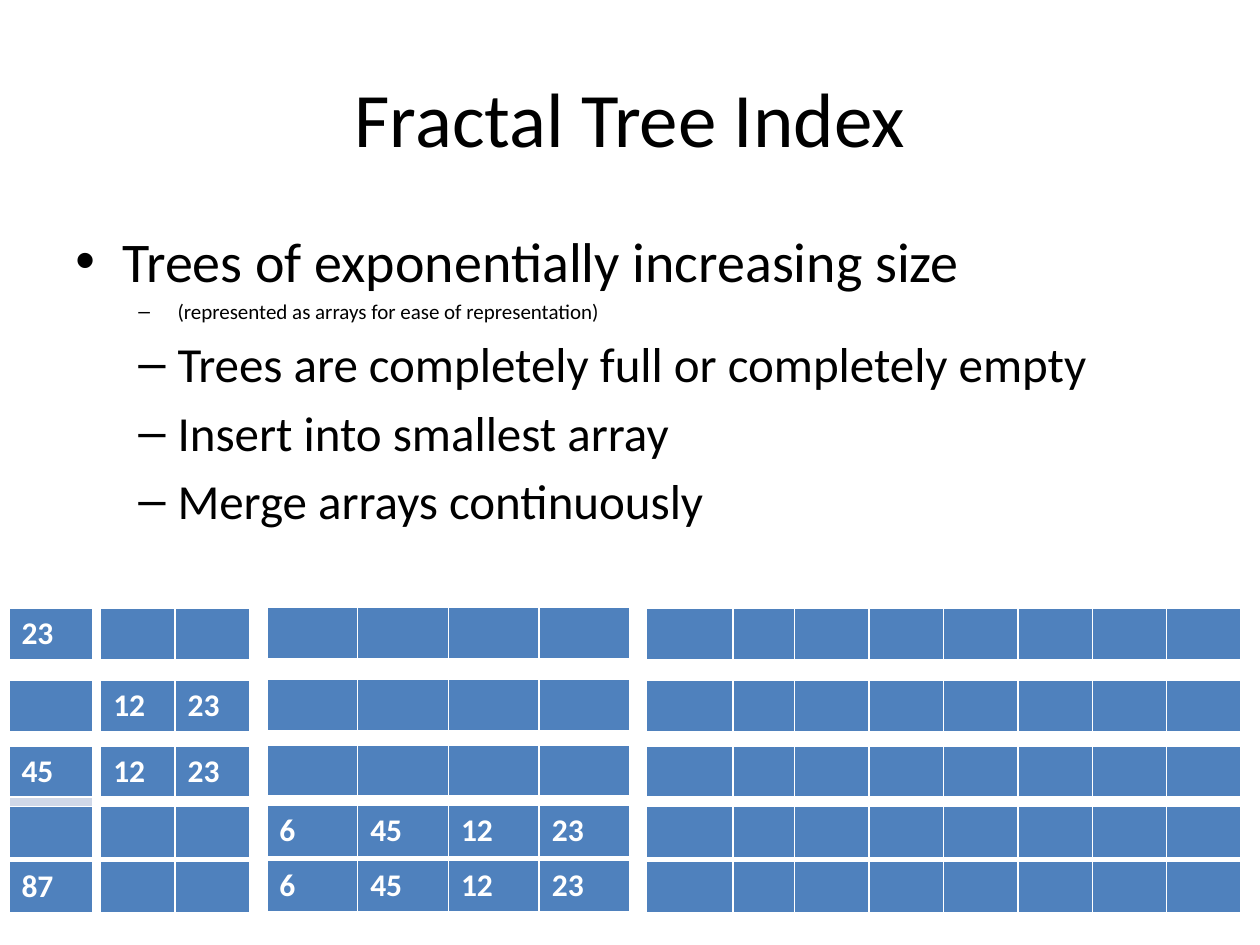
"""Build the Fractal Tree Index slide with its rows of growing arrays."""
from lxml.etree import SubElement
from pptx import Presentation as Deck
from pptx.dml.color import RGBColor as RGB
from pptx.enum.text import MSO_ANCHOR as Anchor, PP_ALIGN as Align
from pptx.oxml.ns import qn
from pptx.util import Cm, Pt

BLACK = RGB(0, 0, 0)
WHITE = RGB(255, 255, 255)
BLUE = RGB(0x4F, 0x81, 0xBD)
PALE = RGB(0xD0, 0xD8, 0xE8)
FONT = "Calibri"

TITLE = "Fractal Tree Index"
POINTS = [
    (0, 32, "Trees of exponentially increasing size"),
    (1, 12, "(represented as arrays for ease of representation)"),
    (1, 28, "Trees are completely full or completely empty"),
    (1, 28, "Insert into smallest array"),
    (1, 28, "Merge arrays continuously"),
]
LEVELS = [("•", 0.95, 0.95), ("–", 2.06, 0.79)]

ARRAYS = [
    (0.18, 0, [1.68]),
    (2.03, 0, [1.5] * 2),
    (5.38, -0.02, [1.83] * 4),
    (13.03, 0, [1.75, 1.24] + [1.5] * 6),
]
STEPS = [
    (12.27, {0: ["23"]}),
    (13.72, {1: ["12", "23"]}),
    (15.04, {0: ["45"], 1: ["12", "23"]}),
    (16.26, {2: ["6", "45", "12", "23"]}),
    (17.37, {0: ["87"], 2: ["6", "45", "12", "23"]}),
]
SPARE = (2, 0)
HIGH = 1.03

HEAD = {"name": FONT, "size": Pt(44)}
BODY = {"name": FONT}
CELL = {"name": FONT, "size": Pt(18), "bold": True}


def style(font, look, color):
    for key, value in look.items():
        setattr(font, key, value)
    font.color.rgb = color


def place(shape, *box):
    for key, value in zip(("left", "top", "width", "height"), box):
        setattr(shape, key, Cm(value))


def add_title(slide):
    title = slide.shapes.title
    place(title, 1.27, 0.76, 22.86, 3.18)
    frame = title.text_frame
    frame.text = TITLE
    frame.vertical_anchor = Anchor.MIDDLE
    par = frame.paragraphs[0]
    par.alignment = Align.CENTER
    style(par.runs[0].font, HEAD, BLACK)


def add_points(slide):
    box = slide.shapes.add_textbox(Cm(1.27), Cm(4.45), Cm(22.86), Cm(12.57))
    frame = box.text_frame
    frame.word_wrap = True
    for i, (level, size, text) in enumerate(POINTS):
        par = frame.add_paragraph() if i else frame.paragraphs[0]
        par.level = level
        par.space_before = Pt(size * 0.2)
        run = par.add_run()
        run.text = text
        style(run.font, {**BODY, "size": Pt(size)}, BLACK)
        mark, left, hang = LEVELS[level]
        props = par._p.get_or_add_pPr()
        props.set("marL", str(Cm(left)))
        props.set("indent", str(-Cm(hang)))
        SubElement(props, qn("a:buFont")).set("typeface", "Arial")
        SubElement(props, qn("a:buChar")).set("char", mark)


def add_array(slide, left, top, widths, values, rows):
    frame = slide.shapes.add_table(rows, len(widths), Cm(left), Cm(top),
                                   Cm(sum(widths)), Cm(HIGH * rows))
    table = frame.table
    for col, width in zip(table.columns, widths):
        col.width = Cm(width)
    for r in range(rows):
        for c in range(len(widths)):
            fill = table.cell(r, c).fill
            fill.solid()
            fill.fore_color.rgb = PALE if r else BLUE
    for c, value in enumerate(values):
        run = table.cell(0, c).text_frame.paragraphs[0].add_run()
        run.text = value
        style(run.font, CELL, WHITE)


def main():
    deck = Deck()
    deck.slide_width, deck.slide_height = Cm(25.4), Cm(19.05)
    slide = deck.slides.add_slide(deck.slide_layouts[5])
    add_title(slide)
    add_points(slide)
    for s, (top, filled) in enumerate(STEPS):
        for a, (left, shift, widths) in enumerate(ARRAYS):
            rows = 2 if (s, a) == SPARE else 1
            add_array(slide, left, top + shift, widths, filled.get(a, []), rows)
    deck.save("out.pptx")


if __name__ == "__main__":
    main()
